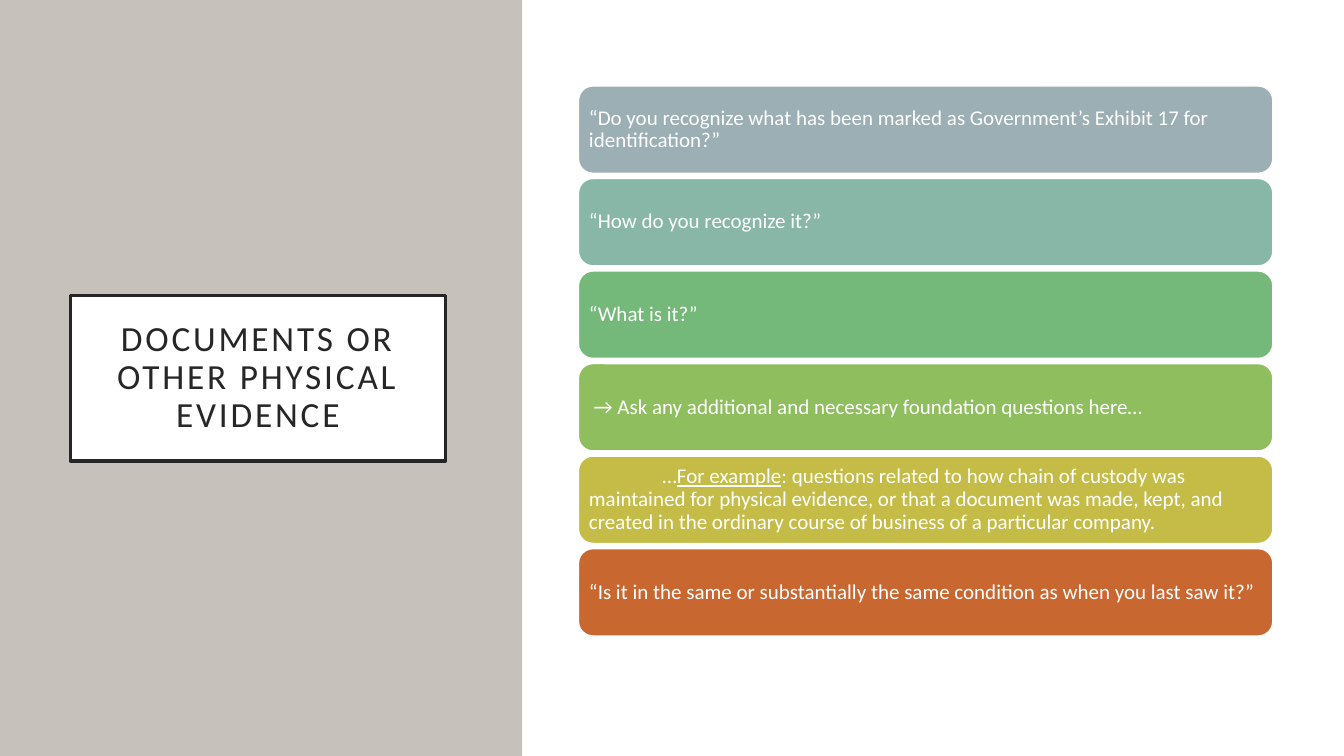
from dataclasses import dataclass

import pptx
import pptx.dml.color
import pptx.enum.shapes
import pptx.enum.text
import pptx.util

Pt = pptx.util.Pt
MSO_SHAPE = pptx.enum.shapes.MSO_SHAPE
PP_ALIGN = pptx.enum.text.PP_ALIGN
ANCHOR_MIDDLE = pptx.enum.text.MSO_ANCHOR.MIDDLE
WHITE, INK = "FFFFFF", "262626"
HEIGHT = 540
CARD_LEFT, CARD_TOP, CARD_WIDTH, CARD_HEIGHT, CARD_STEP = 413.2, 61.4, 496, 62.4, 66.1


@dataclass
class Panel:
    left: float
    width: float
    fill: str


@dataclass
class Card:
    fill: str
    texts: list[str]  # every second text is underlined
    indent: float = 0


PANELS = [Panel(0, 373, "C6C1BA"), Panel(374, 586, WHITE)]
CARDS = [
    Card("9BAFB5", ["“Do you recognize what has been marked as Government’s Exhibit 17 for identification?”"]),
    Card("88B6A7", ["“How do you recognize it?”"]),
    Card("74B97A", ["“What is it?”"]),
    Card("8EBE5E", [" → Ask any additional and necessary foundation questions here…"]),
    Card("C4BC47", [
        "…",
        "For example",
        ": questions related to how chain of custody was maintained for physical evidence, "
        "or that a document was made, kept, and created in the ordinary course of business "
        "of a particular company.",
    ], indent=52.5),
    Card("C96731", ["“Is it in the same or substantially the same condition as when you last saw it?”"]),
]


def rgb(value: str) -> pptx.dml.color.RGBColor:
    return pptx.dml.color.RGBColor.from_string(value)


def set_all(target, values: dict) -> None:
    for name, value in values.items():
        setattr(target, name, value)


def paint(sp, fill: str, line: str = "", line_width: float = 0) -> None:
    """Give a shape its fill, and an outline if a line colour is named."""
    sp.fill.solid()
    sp.fill.fore_color.rgb = rgb(fill)
    if line:
        sp.line.color.rgb = rgb(line)
        sp.line.width = Pt(line_width)
    else:
        sp.line.fill.background()


def set_frame(tf, inset: float) -> None:
    margins = {f"margin_{side}": Pt(inset) for side in ("left", "top", "right", "bottom")}
    set_all(tf, margins | {
        "word_wrap": True,
        "auto_size": pptx.enum.text.MSO_AUTO_SIZE.NONE,
        "vertical_anchor": ANCHOR_MIDDLE,
    })


def add_run(p, text: str, size: float, color: str, underline: bool = False):
    r = p.add_run()
    r.text = text
    set_all(r.font, {"name": "Calibri", "size": Pt(size), "underline": underline})
    r.font.color.rgb = rgb(color)
    return r


def add_panel(s, panel: Panel) -> None:
    sp = s.shapes.add_shape(MSO_SHAPE.RECTANGLE, Pt(panel.left), 0, Pt(panel.width), Pt(HEIGHT))
    sp.shadow.inherit = False
    paint(sp, panel.fill)


def add_title(s, text: str) -> None:
    sp = s.shapes.title
    set_all(sp, {"left": Pt(50.4), "top": Pt(211.2), "width": Pt(267.8), "height": Pt(118)})
    paint(sp, WHITE, INK, 2.5)
    set_frame(sp.text_frame, 14.4)
    p = sp.text_frame.paragraphs[0]
    set_all(p, {"alignment": PP_ALIGN.CENTER, "line_spacing": 0.9})
    r = add_run(p, text, 25.2, INK)
    r.font._element.set("spc", "200")
    # The title is drawn above the panels.
    s.shapes._spTree.append(sp._element)


def add_card(s, card: Card, top: float) -> None:
    sp = s.shapes.add_shape(MSO_SHAPE.ROUNDED_RECTANGLE, Pt(CARD_LEFT), Pt(top),
                            Pt(CARD_WIDTH), Pt(CARD_HEIGHT))
    sp.shadow.inherit = False
    paint(sp, card.fill, WHITE, 1)
    set_frame(sp.text_frame, 4.5)
    p = sp.text_frame.paragraphs[0]
    set_all(p, {"alignment": PP_ALIGN.LEFT, "line_spacing": 0.9})
    if card.indent:
        p._p.get_or_add_pPr().set("indent", str(Pt(card.indent)))
    for i, text in enumerate(card.texts):
        add_run(p, text, 15, WHITE, underline=i % 2 == 1)


def main() -> None:
    prs = pptx.Presentation()
    set_all(prs, {"slide_width": Pt(960), "slide_height": Pt(HEIGHT)})
    s = prs.slides.add_slide(prs.slide_layouts.get_by_name("Title Only"))
    for panel in PANELS:
        add_panel(s, panel)
    add_title(s, "DOCUMENTS OR OTHER PHYSICAL EVIDENCE")
    for i, card in enumerate(CARDS):
        add_card(s, card, CARD_TOP + i * CARD_STEP)
    prs.save("out.pptx")


if __name__ == "__main__":
    main()
